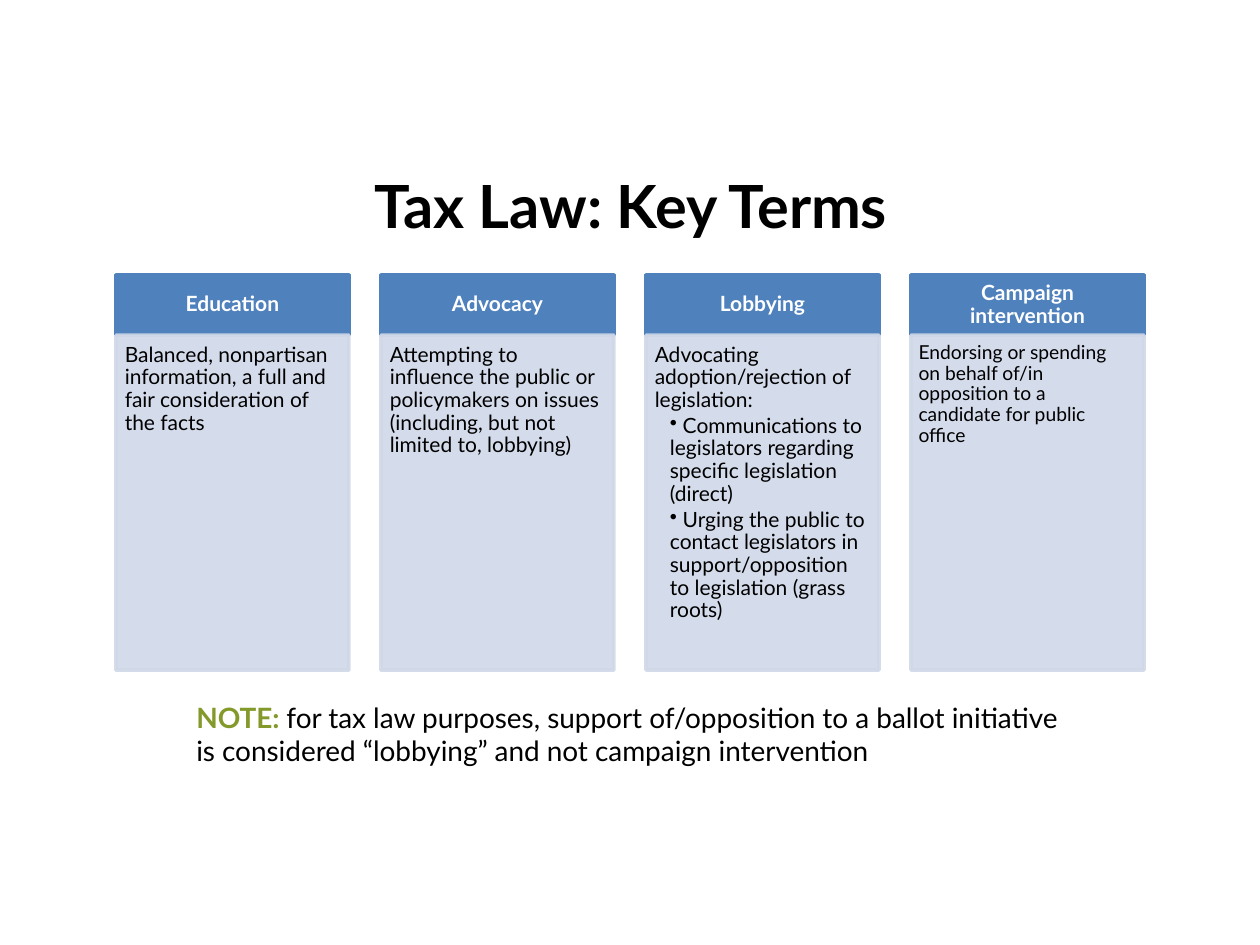
from lxml.etree import SubElement
from pptx import Presentation
from pptx.dml.color import RGBColor
from pptx.enum.shapes import MSO_SHAPE
from pptx.enum.text import MSO_ANCHOR, PP_ALIGN
from pptx.oxml.ns import qn
from pptx.util import Inches, Pt

TITLE = "Tax Law: Key Terms"
# heading, definition, bullets, body text size, body left and top inset
TERMS = [
    ("Education",
     "Balanced, nonpartisan information, a full and fair consideration of the facts",
     [], 12, 0.07),
    ("Advocacy",
     "Attempting to influence the public or policymakers on issues "
     "(including, but not limited to, lobbying)",
     [], 12, 0.07),
    ("Lobbying",
     "Advocating adoption/rejection of legislation:",
     [" Communications to legislators regarding specific legislation (direct)",
      " Urging the public to contact legislators in support/opposition "
      "to legislation (grass roots)"], 12, 0.07),
    ("Campaign intervention",
     "Endorsing or spending on behalf of/in opposition to a candidate for public office",
     [], 11, 0.06),
]
NOTE = [
    ("NOTE: ", "83992A", True),
    ("for tax law purposes, support of/opposition to a ballot initiative is "
     "considered “lobbying” and not campaign intervention", "000000", False),
]

FONT = "Lato"
BLUE, PALE, BLACK, WHITE = "4F81BD", "D0D8E8", "000000", "FFFFFF"
LEFT, RIGHT, WIDTH = 0.92, 9.08, 1.85
PITCH = (RIGHT - LEFT - WIDTH) / (len(TERMS) - 1)
HEAD_TOP, HEAD_HEIGHT, BODY_HEIGHT = 2.18, 0.48, 2.66


def rgb(value):
    return RGBColor.from_string(value)


def style(font, size, color, bold=False):
    font.name, font.size, font.bold = FONT, Pt(size), bold
    font.color.rgb = rgb(color)


def add_text_box(page, left, top, width, height):
    box = page.shapes.add_textbox(Inches(left), Inches(top), Inches(width), Inches(height))
    box.text_frame.word_wrap = True
    return box.text_frame


def set_opacity(shape, percent):
    """Make the fill and the line of a shape partly transparent."""
    for color in shape._element.spPr.iter(qn("a:srgbClr")):
        SubElement(color, qn("a:alpha"), val=str(percent * 1000))


def add_panel(page, left, top, height, color, opacity, insets, anchor):
    panel = page.shapes.add_shape(MSO_SHAPE.RECTANGLE, Inches(left), Inches(top),
                                  Inches(WIDTH), Inches(height))
    panel.shadow.inherit = False
    for fill in (panel.fill, panel.line.fill):
        fill.solid()
        fill.fore_color.rgb = rgb(color)
    panel.line.width = Pt(2)
    if opacity < 100:
        set_opacity(panel, opacity)
    frame = panel.text_frame
    frame.word_wrap = True
    frame.vertical_anchor = anchor
    (frame.margin_left, frame.margin_top,
     frame.margin_right, frame.margin_bottom) = map(Inches, insets)
    return frame


def indent_bullet(para):
    para.level = 1
    properties = para._p.get_or_add_pPr()
    properties.set("marL", str(Inches(0.12)))
    properties.set("indent", "0")
    SubElement(properties, qn("a:buChar"), char="•")


def add_term(page, left, heading, definition, bullets, size, inset):
    head = add_panel(page, left, HEAD_TOP, HEAD_HEIGHT, BLUE, 100,
                     (0.09, 0.05, 0.09, 0.05), MSO_ANCHOR.MIDDLE)
    head.text = heading
    para = head.paragraphs[0]
    para.alignment, para.line_spacing = PP_ALIGN.CENTER, 0.9
    style(para.runs[0].font, 12, WHITE, True)

    body = add_panel(page, left, HEAD_TOP + HEAD_HEIGHT, BODY_HEIGHT, PALE, 90,
                     (inset, inset, 0.09, 0.1), MSO_ANCHOR.TOP)
    body.text = "\n".join([definition, *bullets])
    for index, para in enumerate(body.paragraphs):
        if index:
            indent_bullet(para)
        para.alignment, para.line_spacing = PP_ALIGN.LEFT, 0.9
        para.space_after = Pt(1.8)
        style(para.runs[0].font, size, BLACK)


def main():
    deck = Presentation()
    deck.slide_width, deck.slide_height = Inches(10), Inches(7.5)
    page = deck.slides.add_slide(deck.slide_layouts[6])

    title = add_text_box(page, 0.92, 1.25, 8.17, 0.75)
    title.vertical_anchor = MSO_ANCHOR.MIDDLE
    title.text = TITLE
    title.paragraphs[0].alignment = PP_ALIGN.CENTER
    style(title.paragraphs[0].runs[0].font, 34, BLACK, True)

    for column, term in enumerate(TERMS):
        add_term(page, LEFT + column * PITCH, *term)

    note = add_text_box(page, 1.46, 5.51, 7.07, 0.64)
    for text, color, bold in NOTE:
        span = note.paragraphs[0].add_run()
        span.text = text
        style(span.font, 16, color, bold)

    deck.save("out.pptx")


if __name__ == "__main__":
    main()
